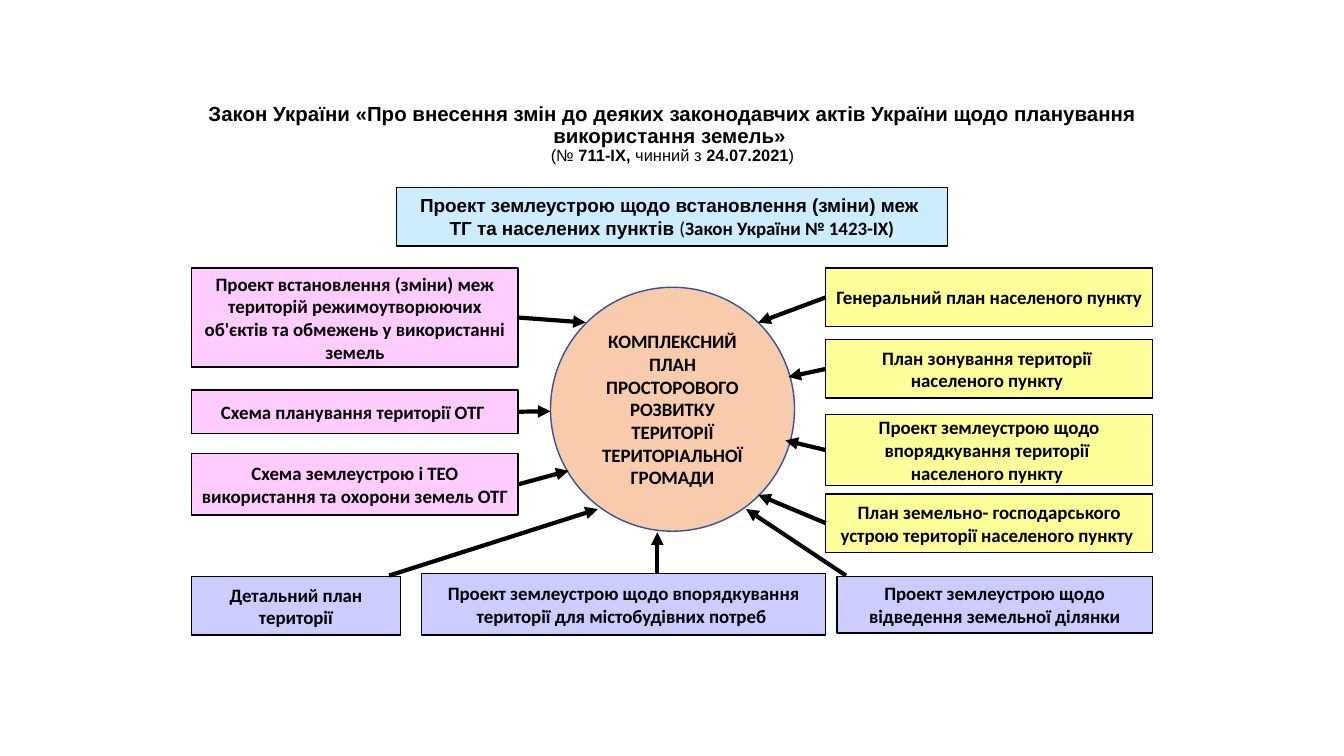
import pptx
import pptx.util
import pptx.dml.color
import pptx.enum.shapes
import pptx.enum.text
import pptx.oxml
import pptx.oxml.ns

Inches = pptx.util.Inches
Pt = pptx.util.Pt
RGBColor = pptx.dml.color.RGBColor
SHAPE = pptx.enum.shapes.MSO_SHAPE
CENTER = pptx.enum.text.PP_ALIGN.CENTER
MIDDLE = pptx.enum.text.MSO_ANCHOR.MIDDLE

COLORS = {
    "black": "000000",
    "circle": "F8CBAD",
    "circle_line": "325491",
    "pink": "FFCCFF",
    "violet": "CCCCFF",
    "yellow": "FFFF99",
    "blue": "CCECFF",
}


def add_text(p, text, size=13.5, font="Calibri", bold=True):
    """Append one formatted run to a paragraph and centre the paragraph."""
    p.alignment = CENTER
    r = p.add_run()
    r.text = text
    r.font.size = Pt(size)
    r.font.name = font
    r.font.bold = bold
    r.font.color.rgb = RGBColor.from_string(COLORS["black"])


def add_box(place, fill, text="", shape=SHAPE.RECTANGLE, line="black"):
    """Draw a filled shape; each line of text becomes a paragraph."""
    sp = s.shapes.add_shape(shape, *[Inches(v) for v in place])
    sp.shadow.inherit = False
    sp.fill.solid()
    sp.fill.fore_color.rgb = RGBColor.from_string(COLORS[fill])
    sp.line.color.rgb = RGBColor.from_string(COLORS[line])
    sp.line.width = Pt(1)
    tf = sp.text_frame
    tf.word_wrap = True
    tf.vertical_anchor = MIDDLE
    for i, part in enumerate(text.split("\n") if text else []):
        add_text(tf.add_paragraph() if i else tf.paragraphs[0], part)
    return sp


prs = pptx.Presentation()
prs.slide_width = Inches(13.33)
prs.slide_height = Inches(7.5)
s = prs.slides.add_slide(prs.slide_layouts[5])

# Title
title = s.shapes.title
title.left, title.top = Inches(1.78), Inches(0.98)
title.width, title.height = Inches(9.78), Inches(0.71)
tf = title.text_frame
tf.word_wrap = True
tf.auto_size = pptx.enum.text.MSO_AUTO_SIZE.NONE
tf.vertical_anchor = MIDDLE
tf.margin_left = tf.margin_right = Inches(0.07)
tf.margin_top = tf.margin_bottom = Inches(0.04)
p = tf.paragraphs[0]
p.line_spacing = 0.9
add_text(p, "Закон України «Про внесення змін до деяких законодавчих актів України "
            "щодо планування використання земель» ", size=14.6, font="Arial")
p.add_line_break()
for text, bold in [("(№ ", False), ("711-IX, ", True), ("чинний з ", False),
                   ("24.07.2021", True), (")", False)]:
    add_text(p, text, size=11.7, font="Arial", bold=bold)

# Central plan and the box above it
add_box((5.46, 2.85, 2.42, 2.42), "circle",
        "КОМПЛЕКСНИЙ ПЛАН ПРОСТОРОВОГО РОЗВИТКУ ТЕРИТОРІЇ ТЕРИТОРІАЛЬНОЇ\nГРОМАДИ",
        shape=SHAPE.OVAL, line="circle_line")
tf = add_box((3.93, 1.86, 5.47, 0.58), "blue").text_frame
add_text(tf.paragraphs[0], "Проект землеустрою щодо встановлення (зміни) меж ", font="Arial")
p = tf.add_paragraph()
add_text(p, "ТГ та населених пунктів ", font="Arial")
add_text(p, "(", bold=False)
add_text(p, "Закон України № 1423-IX)")

# Columns: left, width, fill, connection site, rows of (top, height, arrow tip, text)
columns = [
    (1.9, 3.24, "pink", 3, [
        (2.66, 0.98, (5.81, 3.2), "Проект встановлення (зміни) меж територій режимоутворюючих "
                                  "об'єктів та обмежень у використанні земель"),
        (3.87, 0.43, (5.46, 4.08), "Схема планування теритоpiї ОТГ "),
        (4.5, 0.61, (5.64, 4.67), "Схема землеустрою і ТЕО використання та охорони земель ОТГ "),
    ]),
    (8.19, 3.24, "yellow", 1, [
        (2.66, 0.58, (7.52, 3.2), "Генеральний план населеного пункту"),
        (3.37, 0.58, (7.82, 3.74), "План зонування території \nнаселеного пункту "),
        (4.11, 0.71, (7.79, 4.37), "Проект землеустрою щодо впорядкування території \n"
                                   "населеного пункту "),
        (4.9, 0.58, (7.52, 4.91), "План земельно- господарського устрою території "
                                  "населеного пункту "),
    ]),
]
arrows = []  # (start point, tip, box to join, connection site)
for left, width, fill, site, rows in columns:
    for top, height, tip, text in rows:
        sp = add_box((left, top, width, height), fill, text)
        arrows.append(((left, top), tip, sp, site))

# Bottom row
for place, start, tip, text in [
    ((1.9, 5.72, 2.07, 0.58), (3.86, 5.71), (5.93, 5.05), "Детальний план території"),
    ((4.18, 5.69, 4.01, 0.61), (6.52, 5.69), (6.52, 5.28),
     "Проект землеустрою щодо впорядкування території для містобудівних потреб "),
    ((8.3, 5.72, 3.13, 0.56), (8.39, 5.71), (7.4, 5.05),
     "Проект землеустрою щодо відведення земельної ділянки"),
]:
    add_box(place, "violet", text)
    arrows.append((start, tip, None, None))

# Arrows towards the circle
for start, tip, sp, site in arrows:
    arrow = s.shapes.add_connector(pptx.enum.shapes.MSO_CONNECTOR.STRAIGHT,
                                   *[Inches(v) for v in start + tip])
    if sp is not None:
        arrow.begin_connect(sp, site)
    arrow.line.color.rgb = RGBColor.from_string(COLORS["black"])
    arrow.line.width = Pt(3)
    head = pptx.oxml.parse_xml(
        '<a:tailEnd %s type="triangle"/>' % pptx.oxml.ns.nsdecls("a"))
    arrow.line._get_or_add_ln().append(head)
    arrow._element.spPr.append(
        pptx.oxml.parse_xml("<a:effectLst %s/>" % pptx.oxml.ns.nsdecls("a")))

prs.save("out.pptx")
